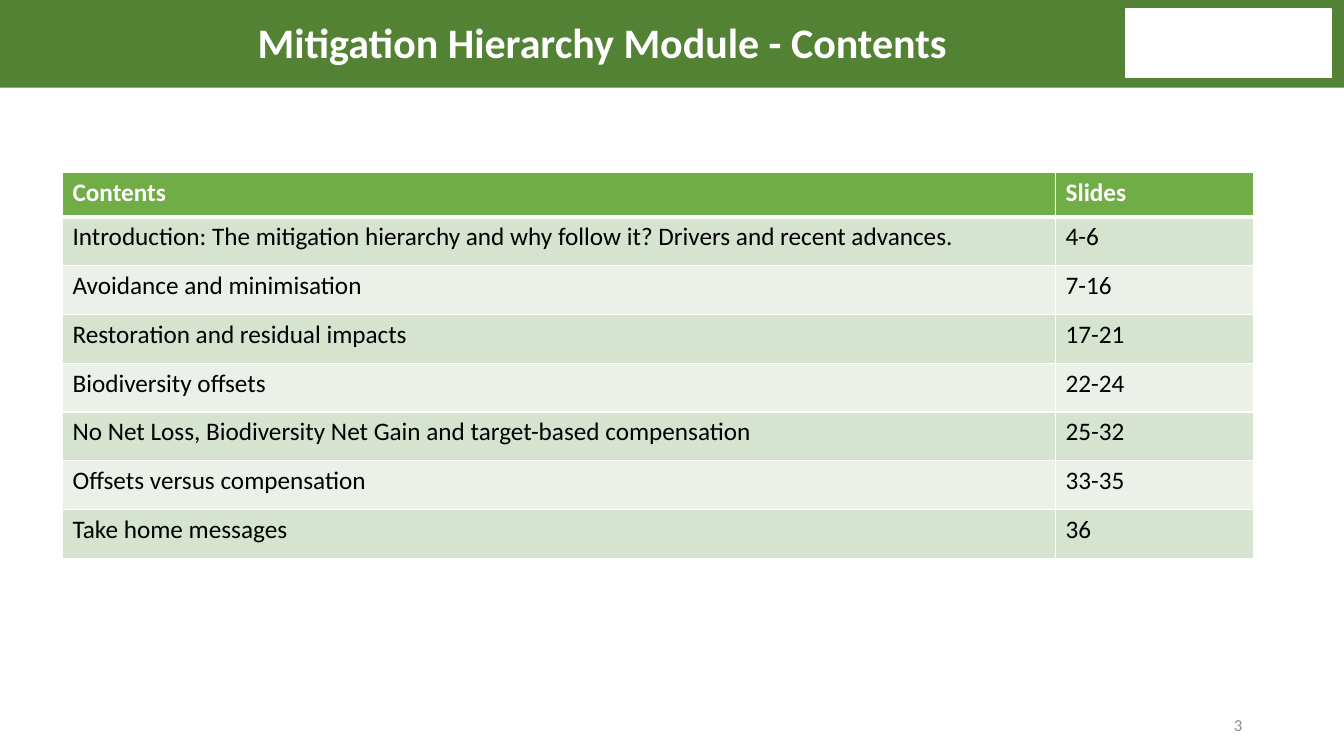
from lxml.etree import SubElement
from pptx import Presentation
from pptx.dml.color import RGBColor
from pptx.enum.shapes import MSO_SHAPE
from pptx.enum.text import MSO_ANCHOR, PP_ALIGN
from pptx.oxml.ns import qn
from pptx.util import Inches, Pt

TITLE = "Mitigation Hierarchy Module - Contents"
PAGE_NUMBER = "3"
HEADINGS = ("Contents", "Slides")
SECTIONS = [
    ("Introduction: The mitigation hierarchy and why follow it? Drivers and recent advances.", "4-6"),
    ("Avoidance and minimisation", "7-16"),
    ("Restoration and residual impacts", "17-21"),
    ("Biodiversity offsets", "22-24"),
    ("No Net Loss, Biodiversity Net Gain and target-based compensation", "25-32"),
    ("Offsets versus compensation", "33-35"),
    ("Take home messages", "36"),
]

THEME = {
    "font": "Calibri",
    "banner": "548235",
    "header": "70AD47",
    "bands": ("D5E3CF", "EBF1E9"),
    "white": "FFFFFF",
    "black": "000000",
    "grey": "8C8C8C",
    "title_size": 30,
    "table_size": 18,
    "number_size": 12,
}

SLIDE_WIDTH, SLIDE_HEIGHT = 13.33, 7.5
TABLE_LEFT, TABLE_TOP, TABLE_HEIGHT = 0.62, 1.71, 3.83
COLUMN_WIDTHS = (9.85, 1.96)
HEADER_HEIGHT = 0.44
THIN, THICK = 1, 3


def colour(name):
    return RGBColor.from_string(name)


def write(frame, text, size, color, bold=False, align=PP_ALIGN.LEFT, spacing=None):
    paragraph = frame.paragraphs[0]
    paragraph.alignment = align
    paragraph.line_spacing = spacing
    run = paragraph.add_run()
    run.text = text
    run.font.name = THEME["font"]
    run.font.size = Pt(size)
    run.font.bold = bold
    run.font.color.rgb = colour(color)


def add_box(slide, place, fill, line=None):
    box = slide.shapes.add_shape(MSO_SHAPE.RECTANGLE, *map(Inches, place))
    box.shadow.inherit = False
    box.fill.solid()
    box.fill.fore_color.rgb = colour(fill)
    if line:
        box.line.color.rgb = colour(line)
        box.line.width = Pt(THIN)
    else:
        box.line.fill.background()


def add_label(slide, place, text, **style):
    label = slide.shapes.add_textbox(*map(Inches, place)).text_frame
    label.word_wrap = True
    label.vertical_anchor = MSO_ANCHOR.MIDDLE
    write(label, text, **style)


def set_borders(cell, top, bottom):
    """Draw white borders; must run before the cell gets its fill."""
    properties = cell._tc.get_or_add_tcPr()
    for side, width in (("L", THIN), ("R", THIN), ("T", top), ("B", bottom)):
        border = SubElement(properties, qn(f"a:ln{side}"), w=str(Pt(width)))
        solid = SubElement(border, qn("a:solidFill"))
        SubElement(solid, qn("a:srgbClr"), val=THEME["white"])


def add_contents(slide):
    rows = [HEADINGS, *SECTIONS]
    table = slide.shapes.add_table(
        len(rows), len(HEADINGS), Inches(TABLE_LEFT), Inches(TABLE_TOP),
        Inches(sum(COLUMN_WIDTHS)), Inches(TABLE_HEIGHT)).table
    for column, width in zip(table.columns, COLUMN_WIDTHS):
        column.width = Inches(width)
    section_height = (TABLE_HEIGHT - HEADER_HEIGHT) / len(SECTIONS)
    for r, entries in enumerate(rows):
        is_header = r == 0
        table.rows[r].height = Inches(HEADER_HEIGHT if is_header else section_height)
        fill = THEME["header"] if is_header else THEME["bands"][(r - 1) % 2]
        for c, entry in enumerate(entries):
            cell = table.cell(r, c)
            set_borders(cell, top=THICK if r == 1 else THIN, bottom=THICK if is_header else THIN)
            cell.fill.solid()
            cell.fill.fore_color.rgb = colour(fill)
            write(cell.text_frame, entry, size=THEME["table_size"], bold=is_header,
                  color=THEME["white"] if is_header else THEME["black"])


def main():
    deck = Presentation()
    deck.slide_width, deck.slide_height = Inches(SLIDE_WIDTH), Inches(SLIDE_HEIGHT)
    slide = deck.slides.add_slide(deck.slide_layouts[6])
    add_label(slide, (11.54, 7.04, 0.88, 0.31), PAGE_NUMBER, size=THEME["number_size"],
              color=THEME["grey"], align=PP_ALIGN.RIGHT)
    add_box(slide, (0, -0.03, SLIDE_WIDTH, 0.9), THEME["banner"])
    add_box(slide, (11.17, 0.09, 2.03, 0.68), THEME["white"], line=THEME["white"])
    add_label(slide, (0.8, 0, 10.35, 0.9), TITLE, size=THEME["title_size"],
              color=THEME["white"], bold=True, align=PP_ALIGN.CENTER, spacing=0.9)
    add_contents(slide)
    deck.save("out.pptx")


if __name__ == "__main__":
    main()
